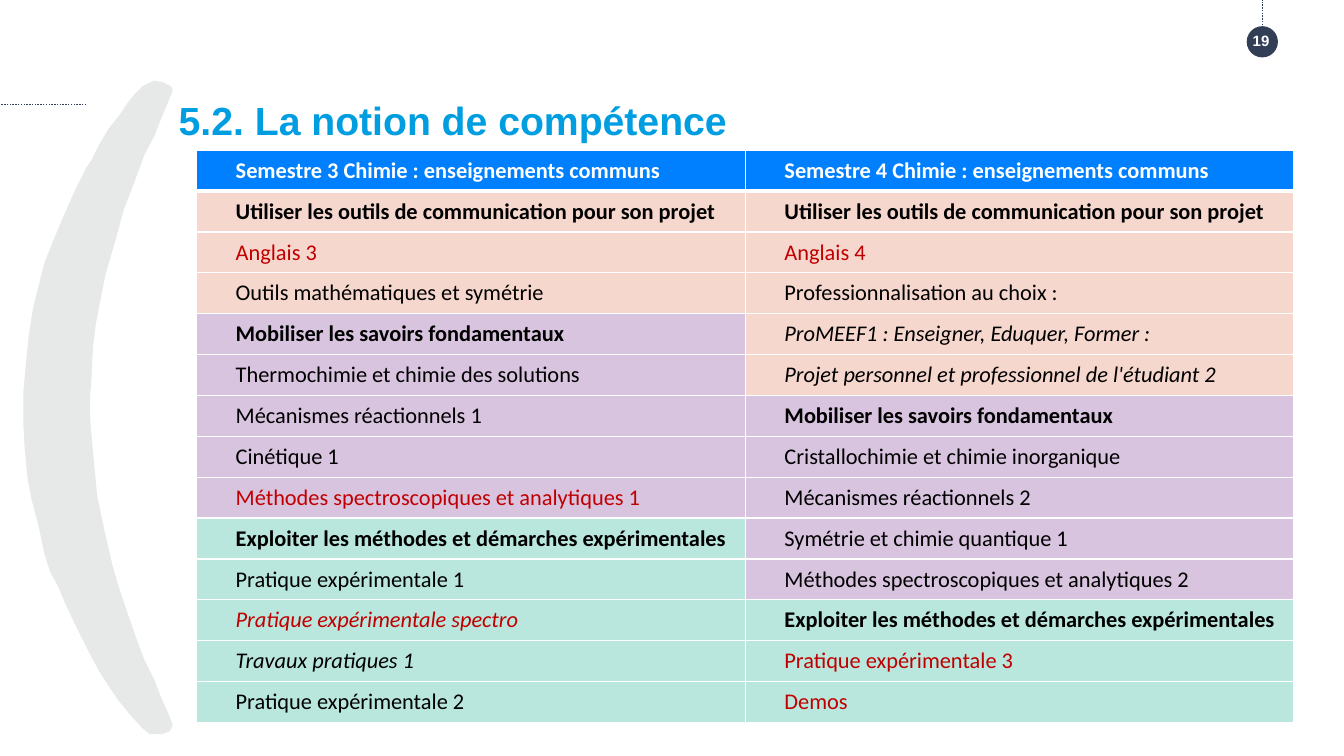
import pptx
import pptx.util
import pptx.dml.color
import pptx.enum.dml
import pptx.enum.shapes
import pptx.enum.text
import pptx.oxml
import pptx.oxml.ns
from lxml import etree

Pt = pptx.util.Pt
THEME = {
    "arc": "E7E8E8", "navy": "313E56", "title": "009EE0", "white": "FFFFFF",
    "black": "000000", "red": "C00000", "header": "0080FF",
    "tools": "F6D7CD", "knowledge": "D9C4E0", "practice": "B9E7DD",
    "heading_font": "Arial", "table_font": "Calibri",
    "title_size": 28, "table_size": 16, "number_size": 10.7,
}


def color(name):
    return pptx.dml.color.RGBColor.from_string(THEME[name])


def write_text(frame, text, *, font, size, fill, bold=False, italic=False, align="LEFT"):
    paragraph = frame.paragraphs[0]
    paragraph.alignment = getattr(pptx.enum.text.PP_ALIGN, align)
    run = paragraph.add_run()
    run.text = text
    run.font.name = THEME[font]
    run.font.size = Pt(THEME[size])
    run.font.bold = bold
    run.font.italic = italic
    run.font.color.rgb = color(fill)


presentation = pptx.Presentation()
presentation.slide_width = Pt(960)
presentation.slide_height = Pt(540)
slide = presentation.slides.add_slide(presentation.slide_layouts[6])
shapes = slide.shapes

upper_arc = [
    (123, 65), (122.5, 62), (116, 59), (110, 58.3), (102, 62), (97, 67), (92, 73),
    (85.5, 81.5), (78, 92), (72.5, 101.5), (65.5, 114), (62, 120), (54, 135.5),
    (45.5, 154), (37.5, 173), (32.5, 188), (28, 204), (24, 219.5), (21, 239),
    (18.7, 259), (17.3, 281), (17.3, 302.5), (18, 320.5), (20, 341), (23, 357),
    (27.5, 376.5), (32.5, 395), (36.5, 407.5), (42, 419), (47, 431), (54, 446.5),
    (64, 466.5), (64, 283), (65, 270), (66, 248.5), (68.5, 232), (71, 216),
    (75, 196.5), (81.5, 171.5), (88, 150.5), (96, 129), (103, 110), (109.5, 97),
    (115, 84), (120, 72),
]
lower_arc = [
    (123, 517.5), (120, 510), (115, 499), (109.5, 486), (103, 471.5), (97, 456),
    (90, 436.5), (83.5, 417.5), (80, 404), (73.5, 378), (69, 354), (65.5, 322),
    (64, 300), (64, 466.5), (71, 479), (78, 489.5), (84, 499), (93, 510.5),
    (102, 520.5), (107, 523.5), (113, 524), (116, 524), (121, 522),
]
for points in (upper_arc, lower_arc):
    builder = shapes.build_freeform(*points[0], scale=Pt(1))
    builder.add_line_segments(points[1:], close=True)
    arc = builder.convert_to_shape()
    arc.shadow.inherit = False
    arc.fill.solid()
    arc.fill.fore_color.rgb = color("arc")
    arc.line.color.rgb = color("arc")
    arc.line.width = Pt(0.75)

badge = shapes.add_shape(
    pptx.enum.shapes.MSO_SHAPE.OVAL, Pt(890.5), Pt(18.7), Pt(22.3), Pt(22.3))
badge.shadow.inherit = False
badge.fill.solid()
badge.fill.fore_color.rgb = color("navy")
badge.line.fill.background()

for ends in ((901.6, 20, 901.6, 0), (61.5, 74.8, 0, 74.8)):
    connector = shapes.add_connector(
        pptx.enum.shapes.MSO_CONNECTOR.STRAIGHT, *(Pt(end) for end in ends))
    connector.line.color.rgb = color("navy")
    connector.line.width = Pt(1)
    connector.line.dash_style = pptx.enum.dml.MSO_LINE.ROUND_DOT
    etree.SubElement(connector._element.spPr, pptx.oxml.ns.qn("a:effectLst"))

number = dict(text="19", font="heading_font", size="number_size", fill="white",
              bold=True, align="CENTER")
title = dict(text="5.2. La notion de compétence", font="heading_font",
             size="title_size", fill="title", bold=True)
for bounds, inset, anchor, content in (
    ((877, 23.8, 47.5, 10.8), 0, "MIDDLE", number),
    ((127.7, 65.5, 784, 34), 3, "TOP", title),
):
    frame = shapes.add_textbox(*(Pt(length) for length in bounds)).text_frame
    frame.word_wrap = True
    frame.margin_left = frame.margin_right = frame.margin_bottom = 0
    frame.margin_top = Pt(inset)
    frame.vertical_anchor = getattr(pptx.enum.text.MSO_ANCHOR, anchor)
    write_text(frame, **content)

BOLD = {"bold": True}
ITALIC = {"italic": True}
RED = {"fill": "red"}
HEADER = {"bold": True, "fill": "white"}
semesters = [
    [
        ("header", [("Semestre 3 Chimie : enseignements communs", HEADER)]),
        ("tools", [
            ("Utiliser les outils de communication pour son projet", BOLD),
            ("Anglais 3", RED),
            ("Outils mathématiques et symétrie", {}),
        ]),
        ("knowledge", [
            ("Mobiliser les savoirs fondamentaux", BOLD),
            ("Thermochimie et chimie des solutions", {}),
            ("Mécanismes réactionnels 1", {}),
            ("Cinétique 1", {}),
            ("Méthodes spectroscopiques et analytiques 1", RED),
        ]),
        ("practice", [
            ("Exploiter les méthodes et démarches expérimentales", BOLD),
            ("Pratique expérimentale 1", {}),
            ("Pratique expérimentale spectro", RED | ITALIC),
            ("Travaux pratiques 1", ITALIC),
            ("Pratique expérimentale 2", {}),
        ]),
    ],
    [
        ("header", [("Semestre 4 Chimie : enseignements communs", HEADER)]),
        ("tools", [
            ("Utiliser les outils de communication pour son projet", BOLD),
            ("Anglais 4", RED),
            ("Professionnalisation au choix :", {}),
            ("ProMEEF1 : Enseigner, Eduquer, Former :", ITALIC),
            ("Projet personnel et professionnel de l'étudiant 2", ITALIC),
        ]),
        ("knowledge", [
            ("Mobiliser les savoirs fondamentaux", BOLD),
            ("Cristallochimie et chimie inorganique", {}),
            ("Mécanismes réactionnels 2", {}),
            ("Symétrie et chimie quantique 1", {}),
            ("Méthodes spectroscopiques et analytiques 2", {}),
        ]),
        ("practice", [
            ("Exploiter les méthodes et démarches expérimentales", BOLD),
            ("Pratique expérimentale 3", RED),
            ("Demos", RED),
        ]),
    ],
]

row_count = sum(len(courses) for block, courses in semesters[0])
row_height = 29.2
table = shapes.add_table(row_count, len(semesters), Pt(140.4), Pt(107.3),
                         Pt(784), Pt(row_height * row_count)).table
for row in table.rows:
    row.height = Pt(row_height)

for column_index, blocks in enumerate(semesters):
    table.columns[column_index].width = Pt(392)
    entries = [(block, *course) for block, courses in blocks for course in courses]
    for row_index, (block, text, style) in enumerate(entries):
        cell = table.cell(row_index, column_index)
        cell.margin_left = Pt(28)
        cell.margin_right = cell.margin_top = cell.margin_bottom = 0
        cell.vertical_anchor = pptx.enum.text.MSO_ANCHOR.MIDDLE
        write_text(cell.text_frame, text,
                   **{"font": "table_font", "size": "table_size", "fill": "black"} | style)
        properties = cell._tc.get_or_add_tcPr()
        for side in ("lnL", "lnR", "lnT", "lnB"):
            thick = (row_index, side) in ((0, "lnB"), (1, "lnT"))
            properties.append(pptx.oxml.parse_xml(
                f'<a:{side} {pptx.oxml.ns.nsdecls("a")} w="{Pt(3 if thick else 1)}">'
                f'<a:solidFill><a:srgbClr val="{THEME["white"]}"/></a:solidFill></a:{side}>'))
        cell.fill.solid()
        cell.fill.fore_color.rgb = color(block)

presentation.save("out.pptx")
